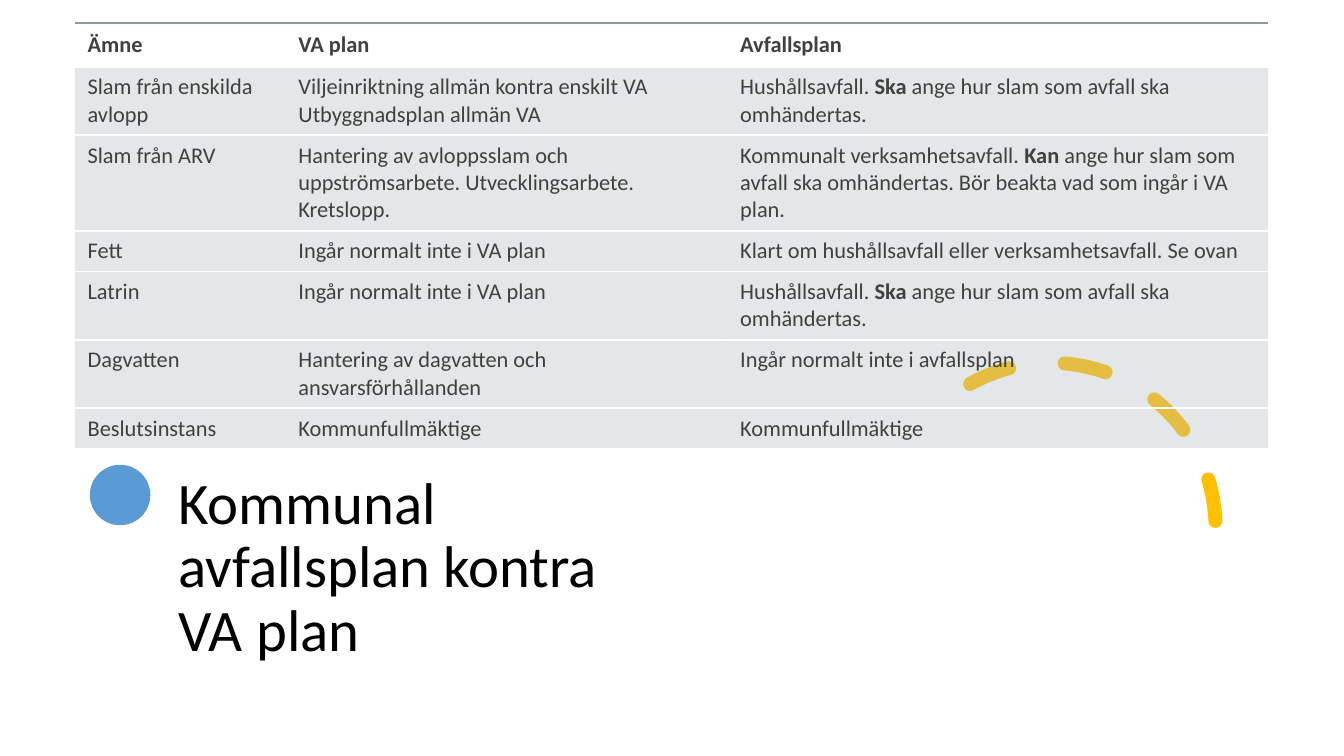
from lxml import etree
from pptx import Presentation
from pptx.dml.color import RGBColor
from pptx.enum.dml import MSO_LINE
from pptx.enum.shapes import MSO_SHAPE
from pptx.enum.text import MSO_ANCHOR, MSO_AUTO_SIZE, PP_ALIGN
from pptx.oxml.ns import qn
from pptx.util import Pt

ARC, OVAL = MSO_SHAPE.ARC, MSO_SHAPE.OVAL
DASH = MSO_LINE.DASH
MIDDLE, TOP = MSO_ANCHOR.MIDDLE, MSO_ANCHOR.TOP
LEFT = PP_ALIGN.LEFT
NO_AUTOFIT = MSO_AUTO_SIZE.NONE
TITLE_ONLY = 5
PLAIN_TABLE = "{2D5ABB26-0587-4C30-8999-92F81FD0307C}"
FONT = "Calibri"
COLORS = {
    "title": "000000", "text": "404040", "dot": "5B9BD5", "arc": "FFC000",
    "rule": "8F9A9D", "band": "B4BCBE", "gap": "FFFFFF",
}

# Table content: each cell is a list of paragraphs, each a list of (text, bold)
SKA = [[("Hushållsavfall. ", False), ("Ska", True),
        (" ange hur slam som avfall ska omhändertas.", False)]]
KAN = [[("Kommunalt verksamhetsavfall. ", False), ("Kan", True),
        (" ange hur slam som avfall ska omhändertas. "
         "Bör beakta vad som ingår i VA plan.", False)]]


def plain(*lines, bold=False):
    return [[(line, bold)] for line in lines]


NOT_IN_VA = plain("Ingår normalt inte i VA plan")
COUNCIL = plain("Kommunfullmäktige")
HEADER = [plain(name, bold=True) for name in ("Ämne", "VA plan", "Avfallsplan")]
# Number of text lines, then the cells of the row
ROWS = [
    (1, HEADER),
    (2, [plain("Slam från enskilda avlopp"),
         plain("Viljeinriktning allmän kontra enskilt VA",
               "Utbyggnadsplan allmän VA"), SKA]),
    (3, [plain("Slam från ARV"),
         plain("Hantering av avloppsslam och uppströmsarbete. "
               "Utvecklingsarbete. Kretslopp."), KAN]),
    (1, [plain("Fett"), NOT_IN_VA,
         plain("Klart om hushållsavfall eller verksamhetsavfall. Se ovan")]),
    (2, [plain("Latrin"), NOT_IN_VA, SKA]),
    (2, [plain("Dagvatten"),
         plain("Hantering av dagvatten och ansvarsförhållanden"),
         plain("Ingår normalt inte i avfallsplan")]),
    (1, [plain("Beslutsinstans"), COUNCIL, COUNCIL]),
]
COLUMN_WIDTHS = (150.6, 315.6, 386)
LINE_HEIGHT = 19.5
HEADER_MARGIN, BODY_MARGIN = 5.8, 4.8


class Page:
    """Current slide together with its text and colour style."""

    def __init__(self, deck):
        self.slide = deck.slides.add_slide(deck.slide_layouts[TITLE_ONLY])
        self.shapes = self.slide.shapes

    def color(self, name):
        return RGBColor.from_string(COLORS[name])

    def add_span(self, para, text, size, color, bold=False):
        span = para.add_run()
        span.text = text
        font = span.font
        font.name, font.size, font.bold = FONT, Pt(size), bold
        font.color.rgb = self.color(color)

    def title(self, text, left, top, width, height):
        box = self.shapes.title
        box.left, box.top = Pt(left), Pt(top)
        box.width, box.height = Pt(width), Pt(height)
        frame = box.text_frame
        frame.word_wrap = True
        frame.auto_size = NO_AUTOFIT
        frame.vertical_anchor = MIDDLE
        para = frame.paragraphs[0]
        para.alignment, para.line_spacing = LEFT, 0.9
        self.add_span(para, text, 42, "title")

    def shape(self, kind, left, top, size):
        shape = self.shapes.add_shape(kind, Pt(left), Pt(top), Pt(size), Pt(size))
        shape.shadow.inherit = False
        return shape

    def dot(self, left, top, size):
        dot = self.shape(OVAL, left, top, size)
        dot.fill.solid()
        dot.fill.fore_color.rgb = self.color("dot")
        dot.line.fill.background()

    def dashed_arc(self, left, top, size):
        arc = self.shape(ARC, left, top, size)
        arc.adjustments[0], arc.adjustments[1] = 144.42, 0
        arc.fill.background()
        arc.line.color.rgb = self.color("arc")
        arc.line.width = Pt(10)
        arc.line.dash_style = DASH
        arc.element.spPr.find(qn("a:ln")).set("cap", "rnd")

    def add_alpha(self, parent, percent):
        rgb = parent.find(".//" + qn("a:srgbClr"))
        etree.SubElement(rgb, qn("a:alpha")).set("val", str(percent * 1000))

    def border(self, cell, side, color, percent=100):
        line = etree.SubElement(cell._tc.get_or_add_tcPr(), qn("a:" + side))
        line.set("w", str(Pt(1.5)))
        fill = etree.SubElement(line, qn("a:solidFill"))
        etree.SubElement(fill, qn("a:srgbClr")).set("val", COLORS[color])
        self.add_alpha(line, percent)

    def cell(self, cell, paragraphs, header):
        margin = Pt(HEADER_MARGIN if header else BODY_MARGIN)
        cell.margin_left = Pt(9.2)
        cell.margin_top = cell.margin_right = cell.margin_bottom = margin
        cell.vertical_anchor = TOP
        # Borders come before the fill
        if header:
            self.border(cell, "lnT", "rule", 60)
        self.border(cell, "lnB", "gap")
        if header:
            cell.fill.background()
        else:
            cell.fill.solid()
            cell.fill.fore_color.rgb = self.color("band")
            self.add_alpha(cell._tc.tcPr.find(qn("a:solidFill")), 35)
        frame = cell.text_frame
        for index, spans in enumerate(paragraphs):
            para = frame.add_paragraph() if index else frame.paragraphs[0]
            for text, bold in spans:
                self.add_span(para, text, 16, "text", bold)

    def table(self, rows, widths, left, top):
        heights = [count * LINE_HEIGHT + 2 * BODY_MARGIN for count, _ in rows]
        heights[0] += 2 * (HEADER_MARGIN - BODY_MARGIN)
        table = self.shapes.add_table(
            len(rows), len(widths), Pt(left), Pt(top),
            Pt(sum(widths)), Pt(sum(heights))).table
        table.horz_banding = False
        table._tbl.tblPr.find(qn("a:tableStyleId")).text = PLAIN_TABLE
        for column, width in zip(table.columns, widths):
            column.width = Pt(width)
        for index, (_, cells) in enumerate(rows):
            table.rows[index].height = Pt(heights[index])
            for column, paragraphs in enumerate(cells):
                self.cell(table.cell(index, column), paragraphs, index == 0)


def main():
    deck = Presentation()
    deck.slide_width, deck.slide_height = Pt(960), Pt(540)
    page = Page(deck)
    # Title and decoration, with the arc behind the table
    page.title("Kommunal avfallsplan kontra VA plan", 120.2, 332, 335.5, 148.3)
    page.dot(64.2, 332, 43.2)
    page.dashed_arc(632.9, 259.2, 235.4)
    # Comparison of the two plans
    page.table(ROWS, COLUMN_WIDTHS, 53.4, 16.6)
    deck.save("out.pptx")


if __name__ == "__main__":
    main()
